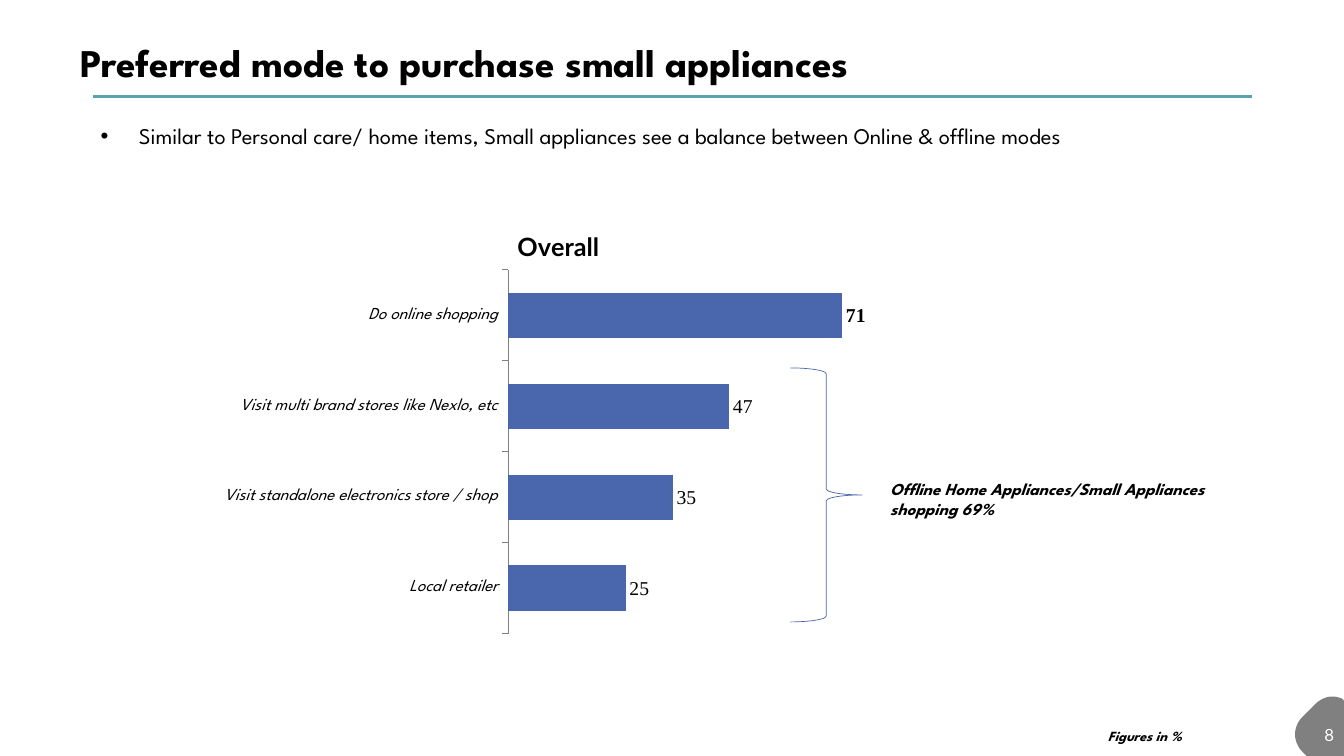
from lxml import etree
from pptx import Presentation
from pptx.chart.data import CategoryChartData
from pptx.dml.color import RGBColor
from pptx.enum.chart import XL_CHART_TYPE as ChartType, XL_LABEL_POSITION as LabelPosition
from pptx.enum.chart import XL_TICK_LABEL_POSITION as TickLabels, XL_TICK_MARK as TickMark
from pptx.enum.shapes import MSO_CONNECTOR as Connector, MSO_SHAPE as Shape
from pptx.enum.text import MSO_ANCHOR as Anchor, MSO_AUTO_SIZE as AutoSize, PP_ALIGN as Align
from pptx.oxml import parse_xml
from pptx.oxml.ns import nsdecls, qn
from pptx.util import Inches, Pt

BLACK = RGBColor(0x00, 0x00, 0x00)
WHITE = RGBColor(0xFF, 0xFF, 0xFF)
GRAY = RGBColor(0x80, 0x80, 0x80)
TEAL = RGBColor(0x5A, 0xA2, 0xAE)
BLUE = RGBColor(0x4A, 0x66, 0xAC)
SPARTAN = "League Spartan"
LATO = "Lato"
TIMES = "Times New Roman"


def set_font(font, name=SPARTAN, size=12, color=BLACK, bold=False, italic=False):
    font.name = name
    font.size = Pt(size)
    font.color.rgb = color
    font.bold = bold
    font.italic = italic


def write_text(frame, text, align=Align.LEFT, anchor=Anchor.TOP, spacing=None,
               after=None, bullet_indent=None, **font):
    frame.word_wrap = True
    frame.auto_size = AutoSize.NONE
    frame.vertical_anchor = anchor
    para = frame.paragraphs[0]
    para.alignment = align
    if spacing:
        para.line_spacing = spacing
    if after:
        para.space_after = Pt(after)
    if bullet_indent:
        properties = para._p.get_or_add_pPr()
        properties.set("marL", str(Inches(bullet_indent)))
        properties.set("indent", str(-Inches(bullet_indent)))
        etree.SubElement(properties, qn("a:buFont")).set("typeface", "Arial")
        etree.SubElement(properties, qn("a:buChar")).set("char", "•")
    span = para.add_run()
    span.text = text
    set_font(span.font, **font)


def curve(start, first, second, end, steps=12):
    points = []
    for step in range(steps + 1):
        t = step / steps
        weights = ((1 - t) ** 3, 3 * t * (1 - t) ** 2, 3 * t ** 2 * (1 - t), t ** 3)
        points.append(tuple(
            sum(weight * value for weight, value in zip(weights, values))
            for values in zip(start, first, second, end)
        ))
    return points


def manual_layout(x, y, width=None, height=None):
    inner = "" if width is None else '<c:layoutTarget val="inner"/>'
    size = "" if width is None else f'<c:w val="{width}"/><c:h val="{height}"/>'
    return parse_xml(
        f'<c:layout {nsdecls("c")}><c:manualLayout>{inner}'
        f'<c:xMode val="edge"/><c:yMode val="edge"/>'
        f'<c:x val="{x}"/><c:y val="{y}"/>{size}</c:manualLayout></c:layout>'
    )


def set_layout(element, layout, before):
    for old in element.findall(qn("c:layout")):
        element.remove(old)
    following = next(child for child in element if child.tag in map(qn, before))
    following.addprevious(layout)


class Page:
    def __init__(self, deck):
        self.page = deck.slides.add_slide(deck.slide_layouts[5])
        self.shapes = self.page.shapes

    def title(self, text, left, top, width, height):
        box = self.shapes.title
        box.left, box.top, box.width, box.height = map(Inches, (left, top, width, height))
        write_text(box.text_frame, text, anchor=Anchor.MIDDLE, spacing=0.9, size=28, bold=True)

    def text(self, text, left, top, width, height, **style):
        box = self.shapes.add_textbox(*map(Inches, (left, top, width, height)))
        write_text(box.text_frame, text, **style)

    def line(self, start, end, color, width):
        rule = self.shapes.add_connector(Connector.STRAIGHT, *map(Inches, start + end))
        rule.line.color.rgb = color
        rule.line.width = Pt(width)
        etree.SubElement(rule._element.spPr, qn("a:effectLst"))

    def outline(self, points, fill):
        scaled = [(Inches(x), Inches(y)) for x, y in points]
        builder = self.shapes.build_freeform(*scaled[0])
        builder.add_line_segments(scaled[1:], close=True)
        corner = builder.convert_to_shape()
        corner.shadow.inherit = False
        corner.fill.solid()
        corner.fill.fore_color.rgb = fill
        corner.line.fill.background()

    def brace(self, left, top, width, height):
        brace = self.shapes.add_shape(Shape.RIGHT_BRACE, *map(Inches, (left, top, width, height)))
        brace.shadow.inherit = False
        brace.fill.background()
        brace.line.color.rgb = BLUE
        brace.line.width = Pt(0.5)

    def bar_chart(self, name, values, left, top, width, height):
        data = CategoryChartData()
        data.categories = list(values)
        data.add_series(name, list(values.values()))
        frame = self.shapes.add_chart(
            ChartType.BAR_CLUSTERED, *map(Inches, (left, top, width, height)), data)
        chart = frame.chart
        set_font(chart.font, LATO, 18)
        chart.has_legend = False
        chart.has_title = True
        heading = chart.chart_title.text_frame.paragraphs[0].add_run()
        heading.text = name
        set_font(heading.font, LATO, 18, bold=True)
        set_layout(chart.chart_title._element, manual_layout(0.44, 0.05), ["c:overlay"])
        chart.chart_title.include_in_layout = False

        categories = chart.category_axis
        categories.reverse_order = True
        categories.major_tick_mark = TickMark.OUTSIDE
        categories.has_major_gridlines = False
        categories.format.line.color.rgb = GRAY
        set_font(categories.tick_labels.font, italic=True)
        amounts = chart.value_axis
        amounts.minimum_scale = 0
        amounts.maximum_scale = 80
        amounts.has_major_gridlines = False
        amounts.tick_label_position = TickLabels.NONE
        amounts.visible = False

        plot = chart.plots[0]
        plot.gap_width = 100
        plot.vary_by_categories = False
        series = plot.series[0]
        series.format.fill.solid()
        series.format.fill.fore_color.rgb = BLUE
        labels = series.data_labels
        labels.show_value = True
        labels.position = LabelPosition.OUTSIDE_END
        set_font(labels.font, TIMES, 14)
        top_label = series.points[0].data_label
        set_font(top_label.font, TIMES, 14, bold=True)
        top_label.position = LabelPosition.OUTSIDE_END
        area = plot._element.getparent()
        set_layout(area, manual_layout(0.433, 0.155, 0.548, 0.824), ["c:barChart"])


def main():
    deck = Presentation()
    deck.slide_width = Inches(13.33)
    deck.slide_height = Inches(7.5)
    page = Page(deck)

    corner = curve((13.22, 6.91), (13.25, 6.91), (13.28, 6.92), (13.31, 6.93))
    corner += [(13.33, 6.95), (13.33, 7.5), (12.96, 7.5)]
    corner += curve((12.92, 7.46), (12.82, 7.36), (12.82, 7.21), (12.92, 7.11))
    corner += curve((13.04, 6.99), (13.09, 6.94), (13.15, 6.91), (13.22, 6.91))
    page.outline(corner, GRAY)
    page.line((0.92, 0.96), (12.42, 0.96), TEAL, 2.25)
    page.text("8", 10.33, 7.09, 3, 0.4, align=Align.RIGHT, anchor=Anchor.MIDDLE,
              name=LATO, color=WHITE)

    page.bar_chart("Overall", {
        "Do online shopping": 71,
        "Visit multi brand stores like Nexlo, etc": 47,
        "Visit standalone electronics store / shop": 35,
        "Local retailer": 25,
    }, 2.09, 2, 6.81, 4.38)

    page.text("Similar to Personal care/ home items, Small appliances see a balance "
              "between Online & offline modes", 0.9, 1.15, 11.83, 0.37,
              anchor=Anchor.MIDDLE, spacing=1.07, after=8, bullet_indent=0.38, size=16)
    page.title("Preferred mode to purchase small appliances", 0.7, 0.3, 12.48, 0.68)
    page.brace(7.84, 3.65, 0.71, 2.52)
    page.text("Offline Home Appliances/Small Appliances shopping 69%",
              8.73, 4.7, 3.68, 0.5, bold=True, italic=True)
    page.text("Figures in %", 10.89, 7.17, 1.02, 0.27, size=10, bold=True, italic=True)
    deck.save("out.pptx")


if __name__ == "__main__":
    main()
